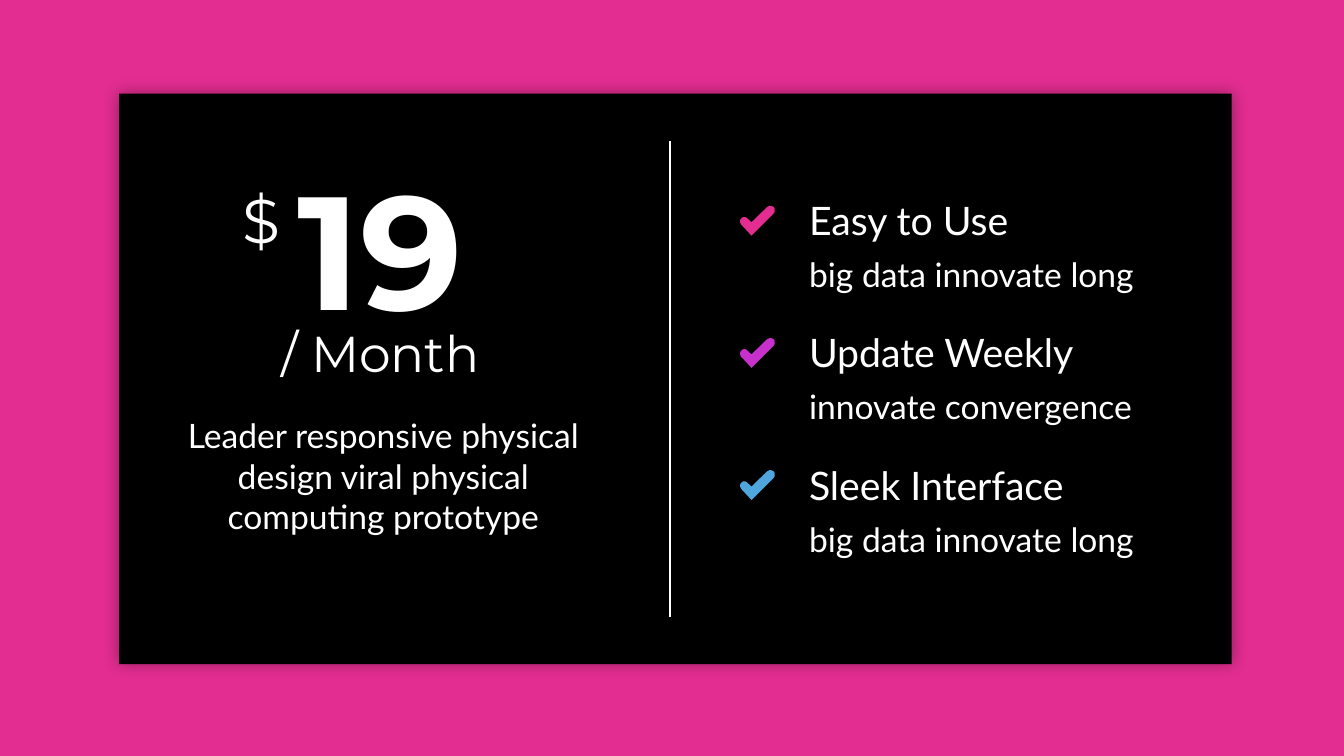
import pptx
import pptx.util
import pptx.dml.color
import pptx.enum.shapes
import pptx.enum.text
import pptx.oxml
import pptx.oxml.ns

Cm = pptx.util.Cm
Pt = pptx.util.Pt
RGBColor = pptx.dml.color.RGBColor
Align = pptx.enum.text.PP_ALIGN

PINK = RGBColor(0xE3, 0x2D, 0x91)
PURPLE = RGBColor(0xC8, 0x30, 0xCC)
BLUE = RGBColor(0x4E, 0xA6, 0xDC)
BLACK = RGBColor(0, 0, 0)
WHITE = RGBColor(255, 255, 255)
HEADING_FONT, BODY_FONT = "Montserrat", "Lato"

PRICE = "19"
# text, (left, top, width, height) in cm, size, font
PRICE_TEXTS = [
    ("Leader responsive physical design viral physical computing prototype",
     (4.34, 10.34, 10.64, 3.33), 24, BODY_FONT),
    ("/ Month", (4.11, 7.98, 10.95, 1.8), 36, HEADING_FONT),
    ("$", (5.51, 4.47, 2.16, 2.13), 44, HEADING_FONT),
]
PRICE_BOX = (5.51, 3.63, 8.13, 5.18)
FEATURES = [
    ("Easy to Use", "big data innovate long", PINK),
    ("Update Weekly", "innovate convergence", PURPLE),
    ("Sleek Interface", "big data innovate long", BLUE),
]
FEATURE_LEFT, FEATURE_TOP, FEATURE_STEP = 20.14, 4.83, 3.33
CHECK_LEFT, CHECK_DROP = 18.64, 0.35

# Check mark in hundredths of a cm: each rounded end is a cubic curve of four points
CHECK_CURVES = [
    [(86, 4), (81, 0), (74, 0), (69, 4)],
    [(20, 33), (15, 28), (8, 28), (4, 33)],
    [(4, 33), (0, 36), (0, 43), (4, 48)],
    [(86, 20), (89, 15), (89, 8), (86, 4)],
]
CHECK_CORNERS = {0: (30, 42), 2: (30, 76)}  # corner that follows a curve
CURVE_STEPS = 8

SHADOW = (
    '<a:effectLst %s><a:outerShdw blurRad="%d" dist="0" dir="0" algn="ctr" '
    'rotWithShape="0"><a:srgbClr val="%s"><a:alpha val="35000"/></a:srgbClr>'
    '</a:outerShdw></a:effectLst>'
)


def place(shape, box):
    shape.left, shape.top, shape.width, shape.height = map(Cm, box)


def write(shape, text, size, font, align=Align.CENTER, bold=False):
    frame = shape.text_frame
    frame.word_wrap = True
    frame.auto_size = pptx.enum.text.MSO_AUTO_SIZE.SHAPE_TO_FIT_TEXT
    frame.vertical_anchor = pptx.enum.text.MSO_ANCHOR.TOP
    para = frame.paragraphs[0]
    para.alignment = align
    span = para.add_run()
    span.text = text
    span.font.size = Pt(size)
    span.font.name = font
    span.font.bold = bold
    span.font.color.rgb = WHITE


def add_text(page, text, box, size, font, align=Align.CENTER):
    write(page.shapes.add_textbox(*map(Cm, box)), text, size, font, align)


def curve_point(curve, t):
    weights = ((1 - t) ** 3, 3 * t * (1 - t) ** 2, 3 * t ** 2 * (1 - t), t ** 3)
    return tuple(sum(w * point[axis] for w, point in zip(weights, curve))
                 for axis in (0, 1))


def add_check(page, left, top, color):
    outline = []
    for index, curve in enumerate(CHECK_CURVES):
        outline += [curve_point(curve, step / CURVE_STEPS)
                    for step in range(CURVE_STEPS + 1)]
        if index in CHECK_CORNERS:
            outline.append(CHECK_CORNERS[index])
    builder = page.shapes.build_freeform(*outline[0], scale=Cm(0.01))
    builder.add_line_segments(outline[1:], close=True)
    check = builder.convert_to_shape(Cm(left), Cm(top))
    check.shadow.inherit = False
    check.fill.solid()
    check.fill.fore_color.rgb = color
    check.line.fill.background()


def add_card(page):
    card = page.shapes.add_shape(pptx.enum.shapes.MSO_SHAPE.RECTANGLE,
                                 Cm(3), Cm(2.36), Cm(28.04), Cm(14.38))
    card.fill.solid()
    card.fill.fore_color.rgb = BLACK
    card.line.fill.background()
    card.element.spPr.append(pptx.oxml.parse_xml(
        SHADOW % (pptx.oxml.ns.nsdecls("a"), Pt(11), BLACK)))
    return card


def add_divider(page):
    divider = page.shapes.add_connector(pptx.enum.shapes.MSO_CONNECTOR.STRAIGHT,
                                        Cm(16.89), Cm(3.56), Cm(16.89), Cm(15.54))
    divider.line.color.rgb = WHITE
    divider.line.width = Pt(1.25)
    divider.element.spPr.append(pptx.oxml.parse_xml(
        "<a:effectLst %s/>" % pptx.oxml.ns.nsdecls("a")))


def main():
    deck = pptx.Presentation()
    deck.slide_width, deck.slide_height = Cm(33.87), Cm(19.05)
    page = deck.slides.add_slide(deck.slide_layouts[5])
    page.background.fill.solid()
    page.background.fill.fore_color.rgb = PINK

    card = add_card(page)
    title = page.shapes.title
    title.element.addprevious(card.element)  # the card lies behind the title
    place(title, PRICE_BOX)
    write(title, PRICE, 115, HEADING_FONT, bold=True)

    add_divider(page)
    for text, box, size, font in PRICE_TEXTS:
        add_text(page, text, box, size, font)

    for index, (name, detail, color) in enumerate(FEATURES):
        top = FEATURE_TOP + index * FEATURE_STEP
        add_text(page, name, (FEATURE_LEFT, top, 9.32, 1.45),
                 28, BODY_FONT, Align.LEFT)
        add_text(page, detail, (FEATURE_LEFT, top + 1.45, 9.53, 1.27),
                 24, BODY_FONT, Align.LEFT)
        add_check(page, CHECK_LEFT, top + CHECK_DROP, color)

    deck.save("out.pptx")


if __name__ == "__main__":
    main()
